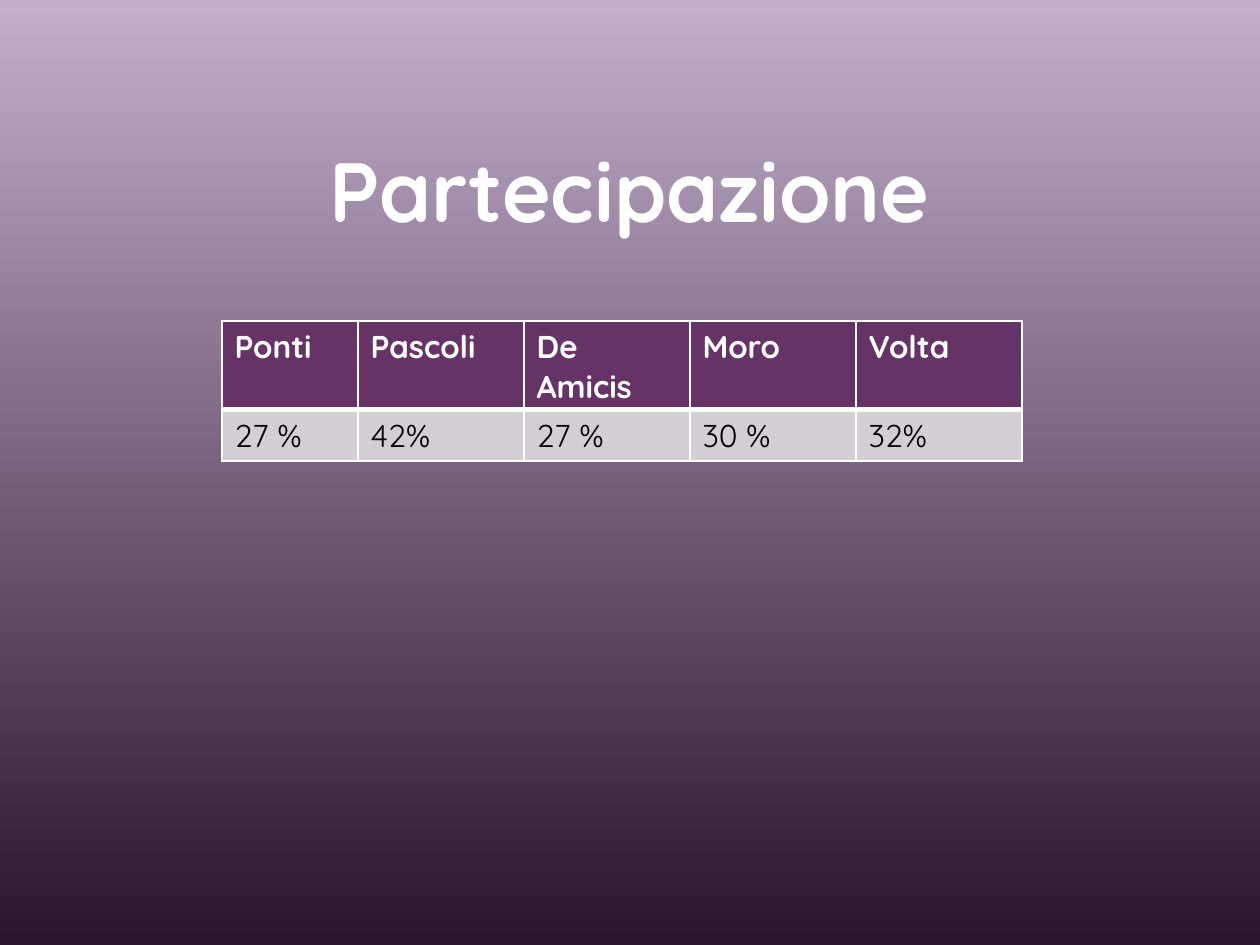
from pptx import Presentation
from pptx.dml.color import RGBColor
from pptx.enum.text import MSO_ANCHOR, PP_ALIGN
from pptx.oxml import parse_xml
from pptx.oxml.ns import nsdecls
from pptx.util import Pt

PX = 914400 // 126
FONT = "Quicksand"
COLORS = {
    "top": "C3AFCC",
    "base": "2B142D",
    "head": "663366",
    "body": "D3CED3",
    "white": "FFFFFF",
    "black": "000000",
}
ROWS = [
    ["Ponti", "Pascoli", "De Amicis", "Moro", "Volta"],
    ["27 %", "42%", "27 %", "30 %", "32%"],
]
WIDTHS = [136] + [166] * 4


def color(name):
    return RGBColor.from_string(COLORS[name])


def style(par, size, tone, bold):
    for run in par.runs:
        run.font.name = FONT
        run.font.size = Pt(size)
        run.font.bold = bold
        run.font.color.rgb = color(tone)


deck = Presentation()
deck.slide_width = 1260 * PX
deck.slide_height = 945 * PX
slide = deck.slides.add_slide(deck.slide_layouts[6])

fill = slide.background.fill
fill.gradient()
fill.gradient_angle = 270
for stop, name, place in zip(fill.gradient_stops, ["top", "base"], [0, 1]):
    stop.color.rgb = color(name)
    stop.position = place

title = slide.shapes.add_textbox(107 * PX, 13 * PX, 1045 * PX, 258 * PX)
frame = title.text_frame
frame.word_wrap = True
frame.vertical_anchor = MSO_ANCHOR.BOTTOM
frame.margin_bottom = 29 * PX
frame.text = "Partecipazione"
par = frame.paragraphs[0]
par.alignment = PP_ALIGN.CENTER
par.line_spacing = 0.95
style(par, 48, "white", True)

table = slide.shapes.add_table(
    len(ROWS), len(WIDTHS), 222 * PX, 321 * PX, sum(WIDTHS) * PX, 104 * PX
).table
for col, width in zip(table.columns, WIDTHS):
    col.width = width * PX

for r, row in enumerate(ROWS):
    head = r == 0
    table.rows[r].height = 52 * PX
    thick = "B" if head else "T"
    for c, text in enumerate(row):
        cell = table.cell(r, c)
        cell.text_frame.text = text
        style(cell.text_frame.paragraphs[0], 18, "white" if head else "black", head)
        props = cell._tc.get_or_add_tcPr()
        for side in "LRTB":
            width = Pt(3 if side == thick else 1)
            props.append(parse_xml(
                f'<a:ln{side} {nsdecls("a")} w="{width}"><a:solidFill>'
                f'<a:srgbClr val="{COLORS["white"]}"/></a:solidFill></a:ln{side}>'
            ))
        cell.fill.solid()
        cell.fill.fore_color.rgb = color("head" if head else "body")

deck.save("out.pptx")
